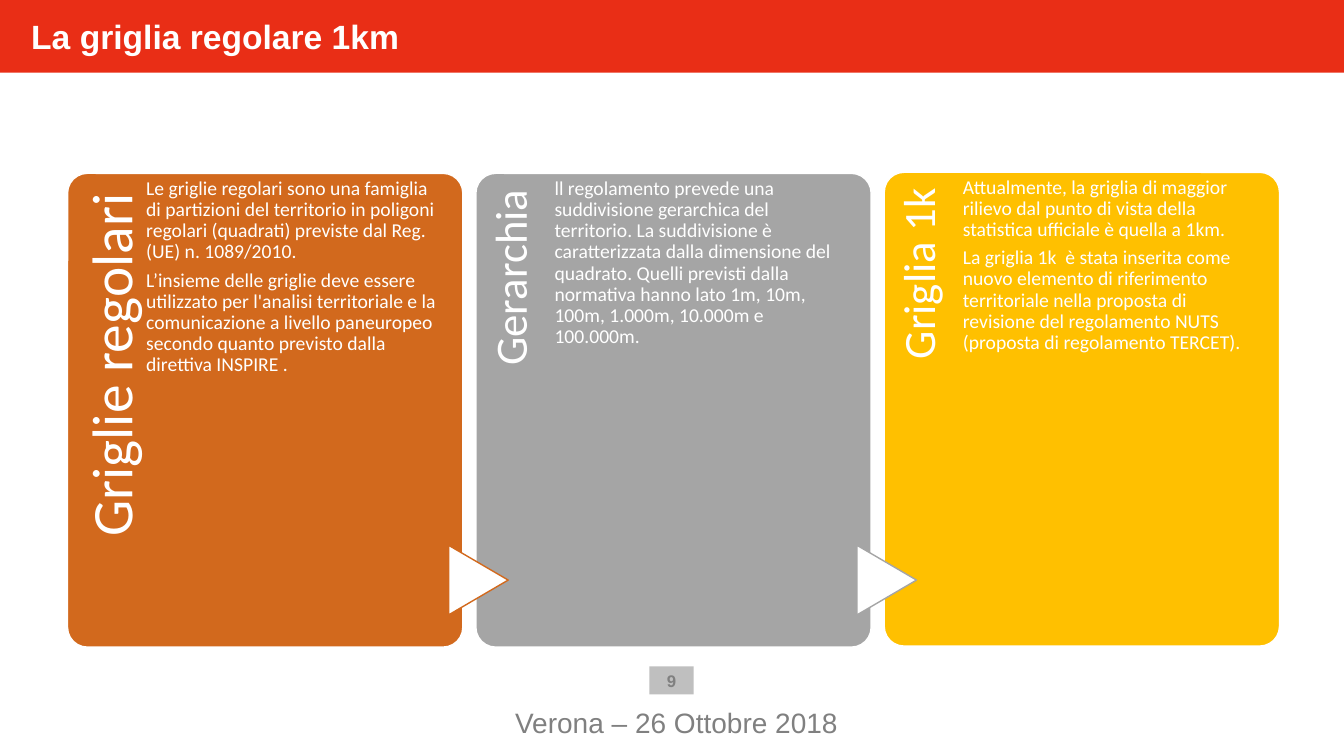
from dataclasses import dataclass

from pptx import Presentation
from pptx.dml.color import RGBColor
from pptx.enum.shapes import MSO_SHAPE
from pptx.enum.text import MSO_ANCHOR, MSO_AUTO_SIZE, PP_ALIGN
from pptx.util import Inches, Pt

ROUND, RECT = MSO_SHAPE.ROUNDED_RECTANGLE, MSO_SHAPE.RECTANGLE
ARROW = MSO_SHAPE.FLOWCHART_EXTRACT
LEFT, CENTER, RIGHT = PP_ALIGN.LEFT, PP_ALIGN.CENTER, PP_ALIGN.RIGHT
TOP, MIDDLE, BOTTOM = MSO_ANCHOR.TOP, MSO_ANCHOR.MIDDLE, MSO_ANCHOR.BOTTOM
NO_FIT = MSO_AUTO_SIZE.NONE
COLORS = {"white": "FFFFFF", "red": "E92E16", "orange": "D2691D",
          "gray": "A5A5A5", "gold": "FFC000", "pale": "BFBFBF", "text": "808080"}

# Card grid, in inches
START, STEP = 0.67, 4.05
WIDE, HIGH = 3.92, 4.7
STRIP, LONG = 0.78, 3.86


@dataclass
class Card:
    label: str
    size: int
    pad: tuple[float, float, float, float]
    color: str
    top: float
    body: list[str]


@dataclass
class Style:
    size: int
    color: str = "white"
    font: str = "Calibri"
    bold: bool = False
    align: PP_ALIGN = LEFT
    anchor: MSO_ANCHOR = TOP
    pad: tuple[float, float, float, float] = (0.1, 0.05, 0.1, 0.05)
    line: float = 1.0
    after: float = 0


CARDS = [
    Card("Griglie regolari", 41, (0, 0.15, 0.2, 0), "orange", 1.72, [
        "Le griglie regolari sono una famiglia di partizioni del territorio in "
        "poligoni regolari (quadrati) previste dal Reg.(UE) n. 1089/2010.",
        "L’insieme delle griglie deve essere utilizzato per l'analisi territoriale "
        "e la comunicazione a livello paneuropeo secondo quanto previsto dalla "
        "direttiva INSPIRE ."]),
    Card("Gerarchia", 32, (0, 0.12, 0.16, 0), "gray", 1.72, [
        "ll regolamento prevede una suddivisione gerarchica del territorio. La "
        "suddivisione è caratterizzata dalla dimensione del quadrato. Quelli "
        "previsti dalla normativa hanno lato 1m, 10m, 100m, 1.000m, 10.000m e "
        "100.000m."]),
    Card("Griglia 1k", 32, (0, 0.12, 0.16, 0), "gold", 1.71, [
        "Attualmente, la griglia di maggior rilievo dal punto di vista della "
        "statistica ufficiale è quella a 1km.",
        "La griglia 1k  è stata inserita come nuovo elemento di riferimento "
        "territoriale nella proposta di revisione del regolamento NUTS (proposta "
        "di regolamento TERCET)."]),
]


def rgb(name: str) -> RGBColor:
    return RGBColor.from_string(COLORS[name])


def paint(shape, fill: str) -> None:
    shape.fill.solid()
    shape.fill.fore_color.rgb = rgb(fill)


def write(shape, text: str, style: Style) -> None:
    frame = shape.text_frame
    frame.text = text
    frame.word_wrap = True
    frame.auto_size = NO_FIT
    frame.vertical_anchor = style.anchor
    (frame.margin_left, frame.margin_top,
     frame.margin_right, frame.margin_bottom) = map(Inches, style.pad)
    for para in frame.paragraphs:
        para.alignment = style.align
        para.line_spacing = style.line
        para.space_before = Pt(0)
        para.space_after = Pt(style.after)
        for run in para.runs:
            run.font.name = style.font
            run.font.size = Pt(style.size)
            run.font.bold = style.bold
            run.font.color.rgb = rgb(style.color)


def add_box(slide, at: tuple[float, float, float, float], text: str, style: Style):
    box = slide.shapes.add_textbox(*map(Inches, at))
    write(box, text, style)
    return box


def add_form(slide, kind: MSO_SHAPE, at: tuple[float, float, float, float],
             fill: str, line: str | None = None):
    form = slide.shapes.add_shape(kind, *map(Inches, at))
    form.shadow.inherit = False
    paint(form, fill)
    if line:
        form.line.color.rgb = rgb(line)
        form.line.width = Pt(1)
    else:
        form.line.fill.background()
    return form


def add_card(slide, card: Card, left: float, prior: Card | None) -> None:
    panel = add_form(slide, ROUND, (left, card.top, WIDE, HIGH), card.color, "white")
    panel.adjustments[0] = 0.05

    # Label turned to read upwards along the left strip
    shift = (LONG - STRIP) / 2
    label = add_box(slide, (left - shift, card.top + shift, LONG, STRIP), card.label,
                    Style(card.size, align=RIGHT, pad=card.pad, line=0.9))
    label.rotation = 270

    # Arrow from the card before
    if prior:
        arrow = add_form(slide, ARROW, (left - 0.32, 5.46, 0.69, 0.59),
                         "white", prior.color)
        arrow.rotation = 90

    add_box(slide, (left + STRIP, card.top, 2.92, HIGH), "\n".join(card.body),
            Style(14, pad=(0, 0.05, 0, 0), line=0.9, after=5))


def main() -> None:
    deck = Presentation()
    deck.slide_width, deck.slide_height = Inches(13.33), Inches(7.5)
    slide = deck.slides.add_slide(deck.slide_layouts[5])

    # Title band
    title = slide.shapes.title
    title.left, title.top = Inches(0), Inches(0)
    title.width, title.height = Inches(13.33), Inches(0.72)
    paint(title, "red")
    write(title, "La griglia regolare 1km",
          Style(24, font="Arial", bold=True, pad=(0.31, 0.16, 0.31, 0.16)))

    # Page number and footer
    page = add_form(slide, RECT, (6.44, 6.61, 0.44, 0.28), "pale")
    write(page, "9", Style(12, "text", "Arial", True, CENTER, MIDDLE))
    add_box(slide, (3.95, 6.97, 5.52, 0.36), "Verona – 26 Ottobre 2018",
            Style(20, "text", "Arial", align=CENTER, anchor=BOTTOM,
                  pad=(0.1, 0.05, 0.1, 0)))

    # Cards
    for i, card in enumerate(CARDS):
        add_card(slide, card, START + i * STEP, CARDS[i - 1] if i else None)

    deck.save("out.pptx")


if __name__ == "__main__":
    main()
